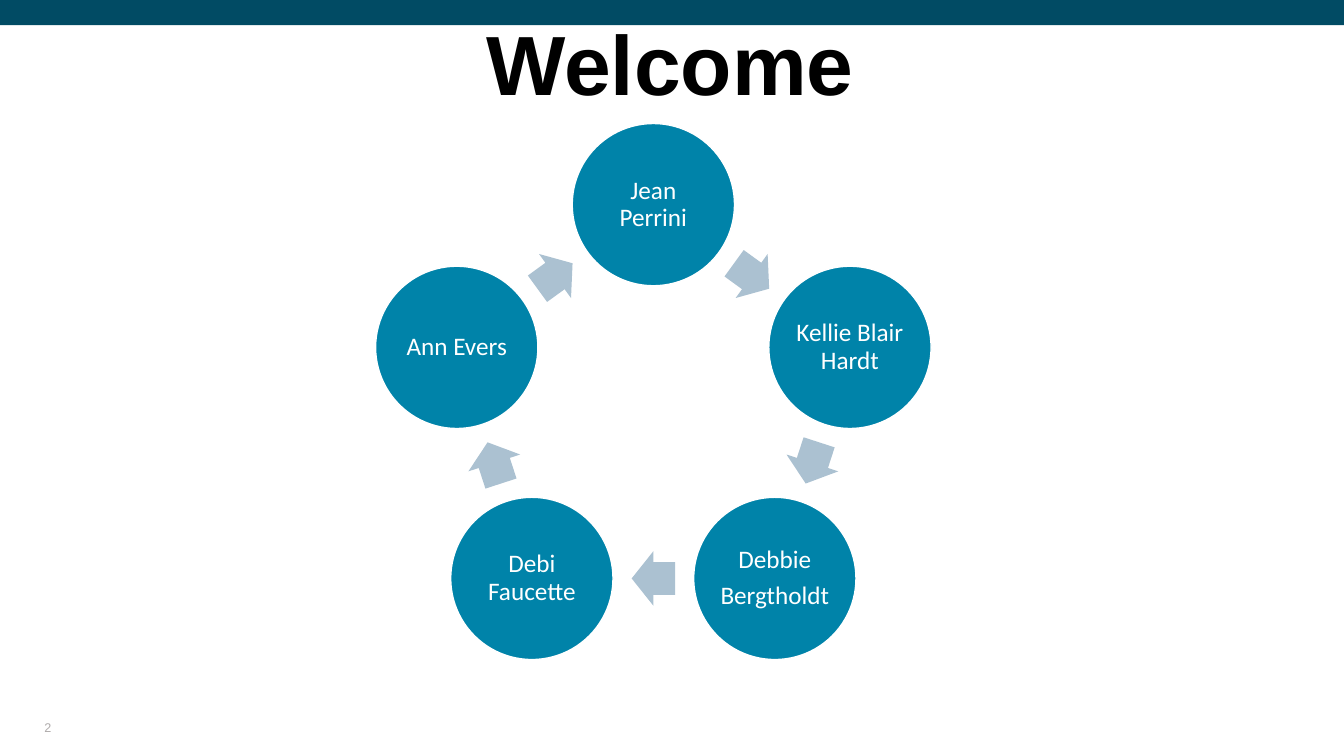
import math

from pptx import Presentation
from pptx import util as u
from pptx.dml import color
from pptx.enum import shapes, text


def paint(fill, hex_color):
    fill.solid()
    fill.fore_color.rgb = color.RGBColor.from_string(hex_color)


def write(frame, lines, frame_format, paragraph_format, font_format, hex_color):
    for name, value in frame_format.items():
        setattr(frame, name, value)
    frame.text = "\n".join(lines)
    for paragraph in frame.paragraphs:
        for name, value in paragraph_format.items():
            setattr(paragraph, name, value)
        for name, value in font_format.items():
            setattr(paragraph.runs[0].font, name, value)
        paint(paragraph.runs[0].font.fill, hex_color)


deck = Presentation()
deck.slide_width = u.Inches(13.33)
deck.slide_height = u.Inches(7.5)
slide = deck.slides.add_slide(deck.slide_layouts[5])

margins = ["margin_left", "margin_right", "margin_top", "margin_bottom"]
flush = dict.fromkeys(margins, 0) | {"word_wrap": True, "auto_size": text.MSO_AUTO_SIZE.NONE}
centered = {"alignment": text.PP_ALIGN.CENTER, "line_spacing": 0.9}

banner = slide.shapes.add_shape(shapes.MSO_SHAPE.RECTANGLE, 0, 0, deck.slide_width, u.Inches(0.25))
banner.shadow.inherit = False
banner.line.fill.background()
paint(banner.fill, "014B64")

welcome = slide.shapes.title
for name, value in {"left": 0.44, "top": 0.23, "width": 12.41, "height": 1.27}.items():
    setattr(welcome, name, u.Inches(value))
write(welcome.text_frame, ["Welcome"],
      flush | {"vertical_anchor": text.MSO_ANCHOR.TOP}, centered,
      {"name": "Arial", "size": u.Pt(60), "bold": True}, "000000")

page_number = slide.shapes.add_textbox(u.Inches(0.44), u.Inches(7.05), u.Inches(3), u.Inches(0.24))
write(page_number.text_frame, ["2"],
      flush | {"vertical_anchor": text.MSO_ANCHOR.BOTTOM}, {},
      {"name": "Arial", "size": u.Pt(9)}, "AFABAB")

people = [
    ["Jean Perrini"],
    ["Kellie Blair Hardt"],
    ["Debbie", "Bergtholdt"],
    ["Debi Faucette"],
    ["Ann Evers"],
]
center_x, center_y, radius = 6.48, 4.08, 2.05
circle_size = 1.61
arrow_width, arrow_height = 0.43, 0.54
step = 360 / len(people)
arrow_radius = radius * math.cos(math.radians(step / 2))
name_frame = flush | dict.fromkeys(margins, u.Inches(0.02)) | {"vertical_anchor": text.MSO_ANCHOR.MIDDLE}
name_paragraph = centered | {"space_after": u.Pt(6.3)}
name_font = {"name": "Calibri", "size": u.Pt(18)}

for index, person in enumerate(people):
    angle = math.radians(index * step)
    circle = slide.shapes.add_shape(
        shapes.MSO_SHAPE.OVAL,
        u.Inches(center_x + radius * math.sin(angle) - circle_size / 2),
        u.Inches(center_y - radius * math.cos(angle) - circle_size / 2),
        u.Inches(circle_size), u.Inches(circle_size))
    circle.shadow.inherit = False
    paint(circle.fill, "0083A9")
    paint(circle.line.fill, "FFFFFF")
    circle.line.width = u.Pt(1)
    write(circle.text_frame, person, name_frame, name_paragraph, name_font, "FFFFFF")

    heading = (index + 0.5) * step
    angle = math.radians(heading)
    arrow = slide.shapes.add_shape(
        shapes.MSO_SHAPE.RIGHT_ARROW,
        u.Inches(center_x + arrow_radius * math.sin(angle) - arrow_width / 2),
        u.Inches(center_y - arrow_radius * math.cos(angle) - arrow_height / 2),
        u.Inches(arrow_width), u.Inches(arrow_height))
    arrow.shadow.inherit = False
    arrow.rotation = heading
    arrow.adjustments[0] = 0.6
    arrow.line.fill.background()
    paint(arrow.fill, "ABC1D1")

deck.save("out.pptx")
